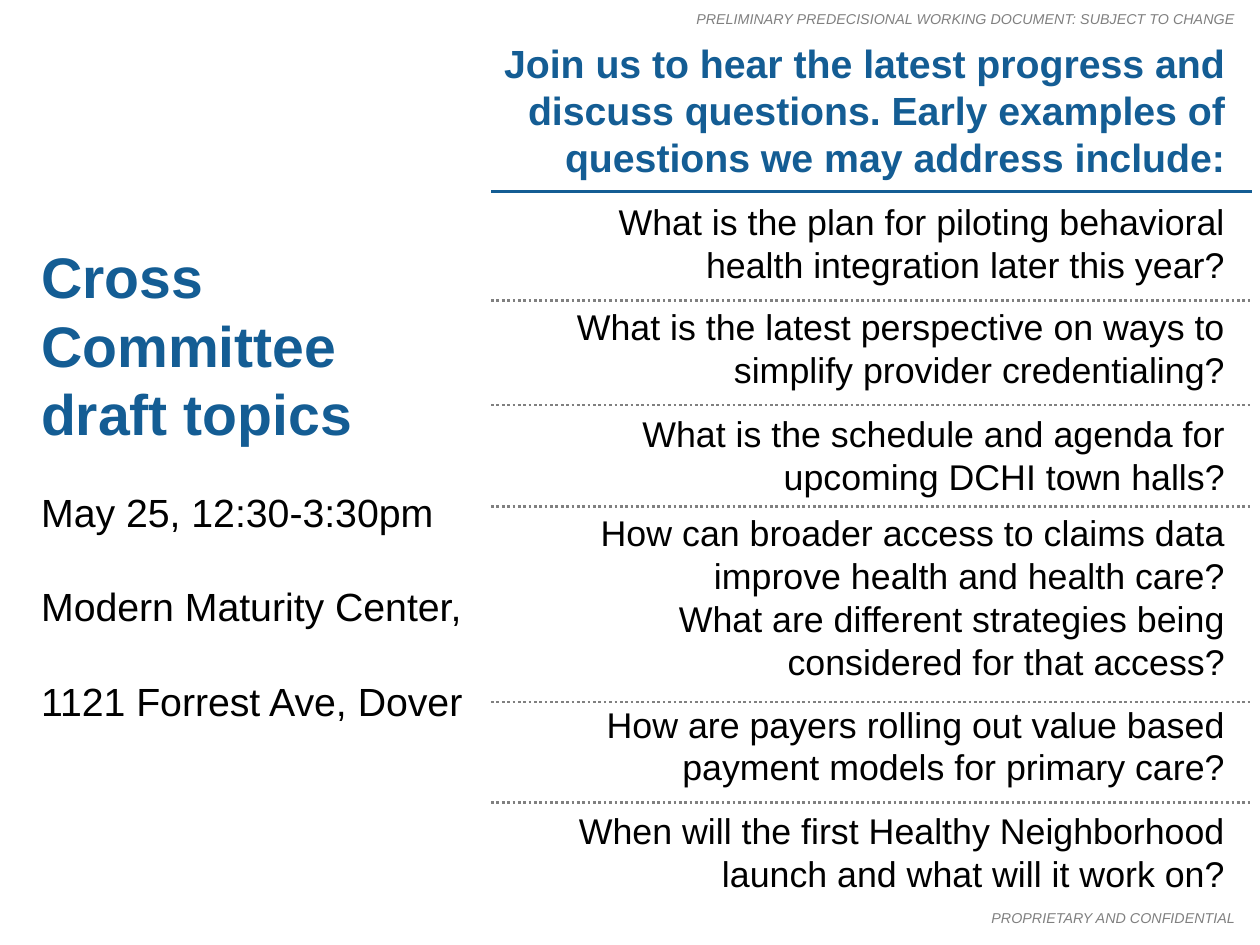
from lxml import etree
from pptx import Presentation, util as u
from pptx.dml.color import RGBColor
from pptx.enum import dml, shapes, text
from pptx.oxml.ns import qn

PX = u.Inches(0.01)
BLUE = RGBColor(0x14, 0x5D, 0x94)
GRAY = RGBColor(0x80, 0x80, 0x80)
BLACK = RGBColor(0, 0, 0)

RIGHT = text.PP_ALIGN.RIGHT
TOP = text.MSO_ANCHOR.TOP
MIDDLE = text.MSO_ANCHOR.MIDDLE
BOTTOM = text.MSO_ANCHOR.BOTTOM

RULE_LEFT, RULE_RIGHT = 382, 974
HEADING_RULE_Y = 149
QUESTION_LEFT, QUESTION_WIDTH = 417, 536
LINE_PAIR_HEIGHT = 69

# Top, height, paragraphs
QUESTIONS = [
    (155, LINE_PAIR_HEIGHT,
     ["What is the plan for piloting behavioral health integration later this year?"]),
    (237, LINE_PAIR_HEIGHT,
     ["What is the latest perspective on ways to simplify provider credentialing?"]),
    (320, LINE_PAIR_HEIGHT,
     ["What is the schedule and agenda for upcoming DCHI town halls?"]),
    (396, 137,
     ["How can broader access to claims data improve health and health care?",
      "What are different strategies being considered for that access?"]),
    (546, LINE_PAIR_HEIGHT,
     ["How are payers rolling out value based payment models for primary care?"]),
    (629, LINE_PAIR_HEIGHT,
     ["When will the first Healthy Neighborhood launch and what will it work on?"]),
]
DIVIDER_YS = [234, 315, 394, 546, 624]


def write_text(frame, paragraphs, *, size, color=BLACK, bold=False, italic=False,
               align=text.PP_ALIGN.LEFT, anchor=TOP, wrap=True, bottom_inset=0, gap=0):
    """Fill a text frame; gap is the space in points between its paragraphs."""
    frame.margin_left = frame.margin_top = frame.margin_right = 0
    frame.margin_bottom = bottom_inset * PX
    frame.word_wrap = wrap
    frame.vertical_anchor = anchor
    for index, wording in enumerate(paragraphs):
        paragraph = frame.add_paragraph() if index else frame.paragraphs[0]
        paragraph.alignment = align
        if index and gap:
            paragraph.space_before = u.Pt(gap)
        run = paragraph.add_run()
        run.text = wording
        run.font.name = "Arial"
        run.font.size = u.Pt(size)
        run.font.bold = bold
        run.font.italic = italic
        run.font.color.rgb = color


def add_text(slide, paragraphs, left, top, width, height, **text_format):
    box = slide.shapes.add_textbox(left * PX, top * PX, width * PX, height * PX)
    write_text(box.text_frame, paragraphs, **text_format)


def add_question(slide, paragraphs, top, height):
    """Add a question in an unpainted double arrow squared off to a full band."""
    band = slide.shapes.add_shape(
        shapes.MSO_SHAPE.LEFT_RIGHT_ARROW,
        QUESTION_LEFT * PX, top * PX, QUESTION_WIDTH * PX, height * PX)
    band.adjustments[0], band.adjustments[1] = 1, 0
    band.shadow.inherit = False
    band.fill.background()
    band.line.fill.background()
    write_text(band.text_frame, paragraphs, size=20, align=RIGHT,
               anchor=BOTTOM, bottom_inset=2)


def add_rule(slide, y, color, dash=None):
    rule = slide.shapes.add_connector(
        shapes.MSO_CONNECTOR.STRAIGHT,
        RULE_LEFT * PX, y * PX, RULE_RIGHT * PX, y * PX)
    rule.line.color.rgb = color
    rule.line.width = u.Pt(1.5)
    if dash:
        rule.line.dash_style = dash
    etree.SubElement(rule._element.spPr, qn("a:effectLst"))


def add_marking(slide, wording, left, top, width, anchor):
    add_text(slide, [wording], left, top, width, 13, size=8, color=GRAY,
             italic=True, align=RIGHT, anchor=anchor, wrap=False)


def add_event(slide):
    add_text(slide, ["Cross Committee draft topics"], 32, 186, 297, 162,
             size=32, color=BLUE, bold=True, anchor=BOTTOM)
    add_text(slide,
             ["May 25, 12:30-3:30pm", "Modern Maturity Center,", "1121 Forrest Ave, Dover"],
             32, 379, 329, 185, size=22, anchor=MIDDLE, gap=26.5)


def add_agenda(slide):
    add_text(slide,
             ["Join us to hear the latest progress and discuss questions. "
              "Early examples of questions we may address include:"],
             354, 30, 599, 111, size=22, color=BLUE, bold=True, align=RIGHT, anchor=MIDDLE)
    add_rule(slide, HEADING_RULE_Y, BLUE)
    for y in DIVIDER_YS:
        add_rule(slide, y, GRAY, dml.MSO_LINE.ROUND_DOT)
    for top, height, paragraphs in QUESTIONS:
        add_question(slide, paragraphs, top, height)


def main():
    deck = Presentation()
    deck.slide_width, deck.slide_height = 980 * PX, 735 * PX
    slide = deck.slides.add_slide(deck.slide_layouts[6])
    add_marking(slide, "PRELIMINARY PREDECISIONAL WORKING DOCUMENT: SUBJECT TO CHANGE",
                537, 8, 424, TOP)
    add_event(slide)
    add_agenda(slide)
    add_marking(slide, "PROPRIETARY AND CONFIDENTIAL", 768, 707, 193, MIDDLE)
    deck.save("out.pptx")


if __name__ == "__main__":
    main()
